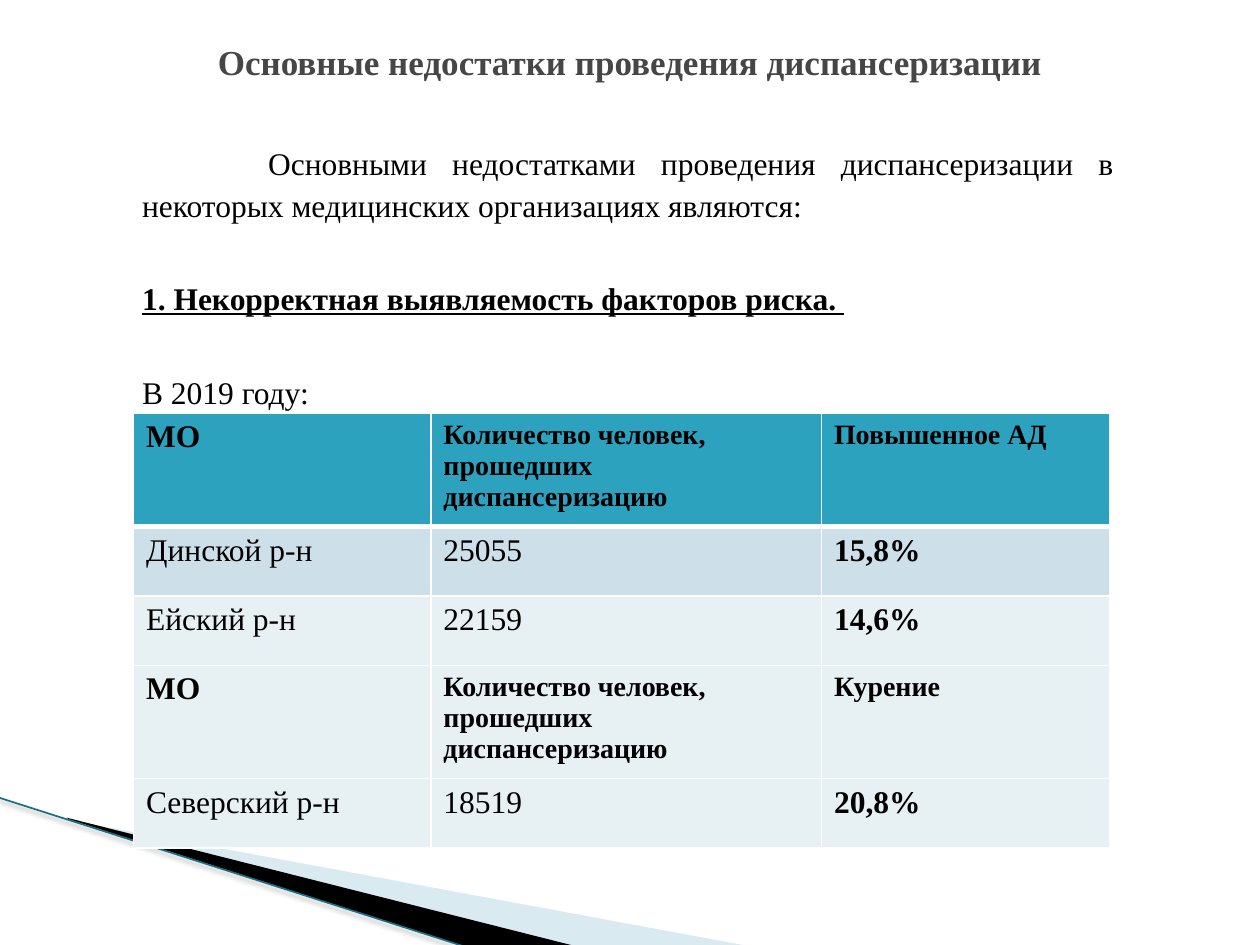
import pptx
import pptx.dml.color
import pptx.enum.text
import pptx.oxml
import pptx.oxml.ns
import pptx.util

Inches, Pt = pptx.util.Inches, pptx.util.Pt
RGBColor = pptx.dml.color.RGBColor
Align, Anchor = pptx.enum.text.PP_ALIGN, pptx.enum.text.MSO_ANCHOR
qn = pptx.oxml.ns.qn

BLACK = RGBColor(0x00, 0x00, 0x00)
WHITE = RGBColor(0xFF, 0xFF, 0xFF)
GREY = RGBColor(0x46, 0x46, 0x46)
TEAL = RGBColor(0x2D, 0xA2, 0xBF)
DEEP = RGBColor(0x19, 0x6F, 0x85)
SKY = RGBColor(0xA0, 0xCB, 0xDC)
BAND = RGBColor(0xCD, 0xDF, 0xE8)
PALE = RGBColor(0xE7, 0xF0, 0xF3)

COUNT = "Количество человек,\nпрошедших диспансеризацию"
ROWS = [
    ("МО", COUNT, "Повышенное АД"),
    ("Динской р-н", "25055", "15,8%"),
    ("Ейский р-н", "22159", "14,6%"),
    ("МО", COUNT, "Курение"),
    ("Северский р-н", "18519", "20,8%"),
]
FILLS = [TEAL, BAND, PALE, PALE, PALE]
WIDTHS = [2.36, 3.1, 2.29]
TALL, LOW = 0.9, 0.55


def xml(text):
    space = 'xmlns:a="http://schemas.openxmlformats.org/drawingml/2006/main"'
    return pptx.oxml.parse_xml(text.replace(">", f" {space}>", 1))


def write(par, text, size=18, color=BLACK, bold=False, line=False, align=None):
    run = par.add_run()
    run.text = text
    font = run.font
    font.name, font.size = "Times New Roman", Pt(size)
    font.bold, font.underline = bold, line
    font.color.rgb = color
    par.alignment = align


class Page:
    def __init__(self, deck):
        self.slide = deck.slides.add_slide(deck.slide_layouts[5])
        self.shapes = self.slide.shapes

    def title(self, text, *box):
        shape = self.shapes.title
        shape.left, shape.top, shape.width, shape.height = map(Inches, box)
        frame = shape.text_frame
        frame.auto_size = pptx.enum.text.MSO_AUTO_SIZE.NONE
        frame.vertical_anchor = Anchor.MIDDLE
        write(frame.paragraphs[0], text, size=20, color=GREY, bold=True,
              align=Align.CENTER)

    def wedge(self, points, color, alpha=None):
        first, *rest = [(Inches(x), Inches(y)) for x, y in points]
        form = self.shapes.build_freeform(*first, scale=1.0)
        form.add_line_segments(rest)
        shape = form.convert_to_shape()
        shape.shadow.inherit = False
        shape.line.fill.background()
        shape.fill.solid()
        shape.fill.fore_color.rgb = color
        if alpha:
            tint = shape.fill._xPr.find(".//" + qn("a:srgbClr"))
            tint.append(xml(f'<a:alpha val="{alpha * 1000}"></a:alpha>'))

    def edge(self, *ends):
        """Draw a thin line with a soft shadow below it."""
        line = self.shapes.add_connector(1, *map(Inches, ends))
        line.line.color.rgb, line.line.width = DEEP, Pt(0.95)
        line._element.spPr.append(xml(
            f'<a:effectLst><a:outerShdw blurRad="{Pt(3.1)}" dist="{Pt(1.6)}" '
            'dir="5400000"><a:srgbClr val="000000"><a:alpha val="38000"/>'
            '</a:srgbClr></a:outerShdw></a:effectLst>'))

    def body(self, items, *box):
        frame = self.shapes.add_textbox(*map(Inches, box)).text_frame
        frame.word_wrap = True
        for i, (text, bold) in enumerate(items):
            par = frame.add_paragraph() if i else frame.paragraphs[0]
            props = par._p.get_or_add_pPr()
            props.set("marL", str(Inches(0.12)))
            props.set("indent", str(0 if i else Inches(1)))
            par.line_spacing = 1.09
            if i:
                par.space_before = Pt(30)
            write(par, text, bold=bold, line=bold, align=Align.JUSTIFY)

    def rule(self, cell, **sides):
        """Set the white cell borders, in points by side."""
        props = cell._tc.get_or_add_tcPr()
        for side, width in sides.items():
            props.append(xml(
                f'<a:ln{side} w="{Pt(width)}"><a:solidFill>'
                f'<a:srgbClr val="{WHITE}"/></a:solidFill></a:ln{side}>'))

    def table(self, left, top):
        highs = [TALL if row[0] == "МО" else LOW for row in ROWS]
        grid = self.shapes.add_table(
            len(ROWS), len(WIDTHS), Inches(left), Inches(top),
            Inches(sum(WIDTHS)), Inches(sum(highs))).table
        for col, width in zip(grid.columns, WIDTHS):
            col.width = Inches(width)
        for r, row in enumerate(ROWS):
            grid.rows[r].height = Inches(highs[r])
            head = row[0] == "МО"
            for c, text in enumerate(row):
                cell = grid.cell(r, c)
                self.rule(cell, L=0.96, R=0.96, T=3 if r == 1 else 0.96,
                          B=3 if r == 0 else 0.96)
                cell.fill.solid()
                cell.fill.fore_color.rgb = FILLS[r]
                frame = cell.text_frame
                for i, part in enumerate(text.split("\n")):
                    par = frame.add_paragraph() if i else frame.paragraphs[0]
                    write(par, part, size=16 if head and c else 18,
                          bold=head or c == 2)


def main():
    deck = pptx.Presentation()
    deck.slide_width, deck.slide_height = Inches(10), Inches(7.5)
    page = Page(deck)
    page.wedge([(0.55, 6.51), (5.95, 7.51), (4.56, 7.51), (0.55, 6.5)], SKY, 40)
    page.wedge([(0.53, 6.49), (4.57, 7.51), (3.72, 7.52), (0.54, 6.5)], BLACK)
    page.edge(-0.01, 6.33, 3.71, 7.52)
    page.body([
        ("Основными недостатками проведения диспансеризации в некоторых "
         "медицинских организациях являются:", False),
        ("1. Некорректная выявляемость факторов риска. ", True),
        ("В 2019 году:", False),
    ], 0.91, 1.07, 8.03, 1.89)
    page.title("Основные недостатки проведения диспансеризации",
               0.5, 0.05, 9, 0.87)
    page.table(1.06, 3.28)
    deck.save("out.pptx")


if __name__ == "__main__":
    main()
